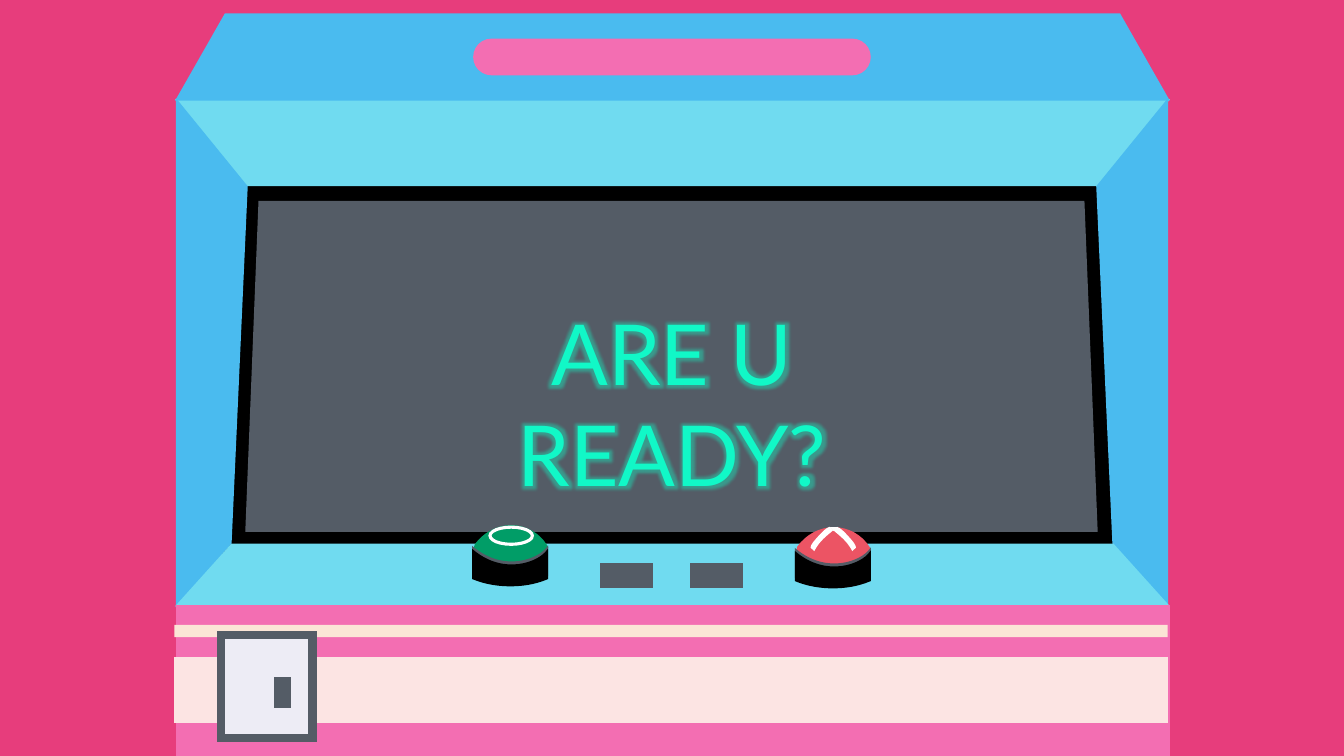
import lxml.etree
import pptx
import pptx.dml.color
import pptx.enum.shapes
import pptx.enum.text
import pptx.oxml.ns
import pptx.util

qn = pptx.oxml.ns.qn
KIND = pptx.enum.shapes.MSO_SHAPE
COLOURS = {
    "backdrop": "E73D7C", "black": "000000", "navy": "325491",
    "aqua": "70DBF0", "blue": "4ABBEF", "pink": "F36EB2",
    "blush": "FCE4E3", "cream": "FBE5D6", "grey": "545C66",
    "door": "EDECF5", "green": "019D67", "red": "EC5464",
    "white": "FFFFFF", "neon": "11F8C7",
}
PANEL = [(0, 70), (86, 0), (440, 16), (502, 70)]
DOME = [(37, 0), (52, 0, 65, 8, 72, 19), (74, 22), (72, 25),
        (65, 36, 52, 44, 37, 44), (22, 44, 9, 36, 1, 25),
        (0, 22), (1, 19), (9, 8, 22, 0, 37, 0)]
SKIRT = [(0, 0), (31, 26, 66, 12, 74, 0), (74, 28),
         (62, 33, 50, 35, 37, 35), (25, 35, 12, 33, 0, 28)]
SHINE = [(2, 0), (7, 0), (6, 8, 4, 17, 7, 28), (2, 28),
         (0, 26, 0, 20, 0, 15), (0, 9, 0, 3, 2, 0)]


def set_values(target, values):
    for name, value in values.items():
        setattr(target, name, value)


class Artist:
    scale = 9144
    font = {"name": "Lato", "size": pptx.util.Pt(60)}

    def __init__(self, deck):
        self.slide = deck.slides.add_slide(deck.slide_layouts[6])

    def emu(self, *lengths):
        return [pptx.util.Emu(length * self.scale) for length in lengths]

    def paint(self, fill, colour):
        fill.solid()
        fill.fore_color.rgb = pptx.dml.color.RGBColor.from_string(COLOURS[colour])

    def finish(self, shape, fill, line, width):
        shape.shadow.inherit = False
        if fill:
            self.paint(shape.fill, fill)
        else:
            shape.fill.background()
        if line:
            self.paint(shape.line.fill, line)
            shape.line.width = pptx.util.Pt(width)
            edge = shape._element.spPr.find(qn("a:ln"))
            lxml.etree.SubElement(edge, qn("a:miter"), lim="800000")
        else:
            shape.line.fill.background()

    def background(self, colour):
        self.paint(self.slide.background.fill, colour)

    def shape(self, kind, place, fill, line=None, width=1, adjust=None, rotation=0):
        shape = self.slide.shapes.add_shape(kind, *self.emu(*place))
        shape.rotation = rotation
        if adjust is not None:
            shape.adjustments[0] = adjust
        self.finish(shape, fill, line, width)

    def outline(self, steps, fill, line=None, origin=(0, 0), mirror=1, rotation=0):
        placed = [[(origin[0] + mirror * x, origin[1] + y)
                   for x, y in zip(step[::2], step[1::2])] for step in steps]
        ends = [points[-1] for points in placed]
        builder = self.slide.shapes.build_freeform(*ends[0], scale=self.scale)
        builder.add_line_segments(ends[1:], close=True)
        shape = builder.convert_to_shape()
        left = min(x for x, y in ends)
        top = min(y for x, y in ends)
        segments = list(shape._element.iter(qn("a:lnTo")))
        for segment, points in zip(segments, placed[1:]):
            if len(points) == 3:
                curve = lxml.etree.Element(qn("a:cubicBezTo"))
                for x, y in points:
                    lxml.etree.SubElement(curve, qn("a:pt"), x=str(x - left), y=str(y - top))
                segment.getparent().replace(segment, curve)
        shape.rotation = rotation
        self.finish(shape, fill, line, 1)

    def button(self, left, top, colour):
        self.outline(DOME, colour, origin=(left, top))
        for colour, drop in (("grey", 22), ("black", 25)):
            self.outline(SKIRT, colour, colour, (left - 1, top + drop))

    def glowing_text(self, place, text, colour):
        box = self.slide.shapes.add_textbox(*self.emu(*place))
        set_values(box.text_frame, {
            "word_wrap": True,
            "auto_size": pptx.enum.text.MSO_AUTO_SIZE.SHAPE_TO_FIT_TEXT})
        para = box.text_frame.paragraphs[0]
        para.alignment = pptx.enum.text.PP_ALIGN.CENTER
        span = para.add_run()
        span.text = text
        set_values(span.font, self.font)
        self.paint(span.font.fill, colour)
        effects = lxml.etree.Element(qn("a:effectLst"))
        glow = lxml.etree.SubElement(effects, qn("a:glow"), rad="101600")
        tint = lxml.etree.SubElement(glow, qn("a:srgbClr"), val=COLOURS[colour])
        lxml.etree.SubElement(tint, qn("a:alpha"), val="40000")
        span.font._element.find(qn("a:solidFill")).addnext(effects)


def draw_cabinet(artist):
    artist.background("backdrop")
    artist.shape(KIND.RECTANGLE, (219, 155, 915, 420), "black", "navy")
    artist.shape(KIND.TRAPEZOID, (175, 99, 984, 85), "aqua", "aqua",
                 adjust=0.81, rotation=180)
    for left, mirror in ((-41, 1), (1374, -1)):
        artist.outline(PANEL, "blue", "blue", (left, 315), mirror, 90 * mirror)
    artist.shape(KIND.TRAPEZOID, (175, 540, 984, 61), "aqua", "aqua", adjust=0.9)
    artist.shape(KIND.TRAPEZOID, (175, 14, 984, 85), "blue", "blue", adjust=0.57)
    artist.shape(KIND.RECTANGLE, (175, 601, 985, 149), "pink", "pink")
    artist.shape(KIND.RECTANGLE, (173, 652, 985, 65), "blush", "blush")
    artist.shape(KIND.TRAPEZOID, (244, 200, 844, 327), "grey", "grey", adjust=0.04)
    artist.shape(KIND.RECTANGLE, (173, 620, 985, 12), "cream")
    artist.glowing_text((387, 294, 559, 111), "ARE U READY?", "neon")


def draw_controls(artist):
    for left in (596, 685):
        artist.shape(KIND.RECTANGLE, (left, 559, 51, 24), "grey", "grey")
    artist.shape(KIND.RECTANGLE, (219, 630, 91, 102), "door", "grey", 6)
    artist.shape(KIND.RECTANGLE, (272, 672, 16, 30), "grey", "grey")
    artist.shape(KIND.ROUNDED_RECTANGLE, (470, 39, 393, 35), "pink", "pink", adjust=0.5)
    artist.button(470, 521, "green")
    artist.button(790, 523, "red")
    artist.shape(KIND.OVAL, (486, 523, 42, 17), None, "white", 2.25)
    for left, mirror in ((811, 1), (842, -1)):
        artist.outline(SHINE, "white", None, (left, 520), mirror, 42.4 * mirror)
    artist.shape(KIND.ISOSCELES_TRIANGLE, (823, 523, 8, 4), "white", rotation=180)


def main():
    deck = pptx.Presentation()
    set_values(deck, {"slide_width": pptx.util.Inches(13.33),
                      "slide_height": pptx.util.Inches(7.5)})
    artist = Artist(deck)
    draw_cabinet(artist)
    draw_controls(artist)
    deck.save("out.pptx")


if __name__ == "__main__":
    main()
